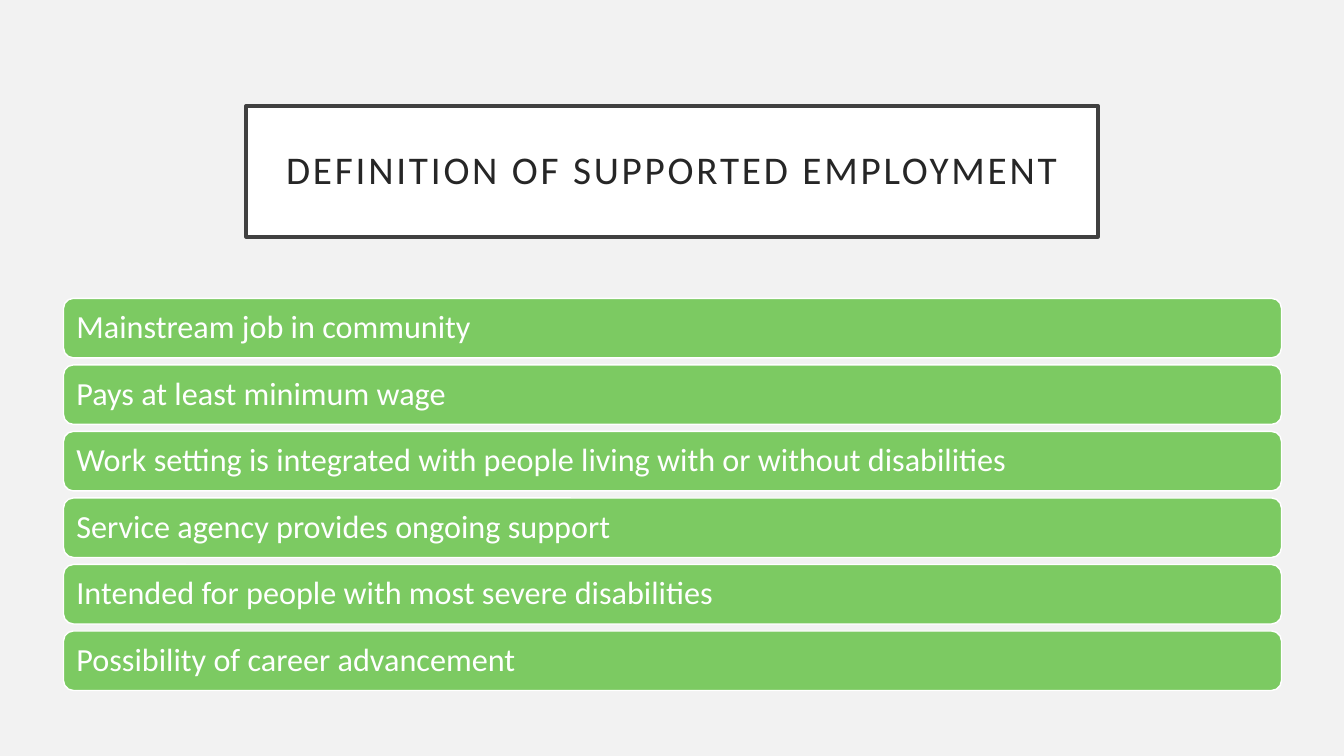
from pptx import Presentation
from pptx.dml.color import RGBColor
from pptx.enum.shapes import MSO_SHAPE
from pptx.enum.text import MSO_ANCHOR, PP_ALIGN
from pptx.util import Inches, Pt

TITLE = "DEFINITION OF SUPPORTED EMPLOYMENT"
POINTS = [
    "Mainstream job in community",
    "Pays at least minimum wage",
    "Work setting is integrated with people living with or without disabilities",
    "Service agency provides ongoing support",
    "Intended for people with most severe disabilities",
    "Possibility of career advancement",
]
FONT = "Calibri"
LEFT, TOP, WIDTH, HEIGHT, STEP = 0.63, 2.96, 12.08, 0.59, 0.66


def color(code):
    return RGBColor.from_string(code)


def add_box(slide, kind, place, fill, line, weight):
    box = slide.shapes.add_shape(kind, *[Inches(n) for n in place])
    box.shadow.inherit = False
    box.fill.solid()
    box.fill.fore_color.rgb = color(fill)
    box.line.color.rgb = color(line)
    box.line.width = Pt(weight)
    return box


def write(box, text, size=23, ink="FFFFFF", align=PP_ALIGN.LEFT, inset=0.1, track=0):
    """Fill a box with one line of text; track is letter spacing in points."""
    frame = box.text_frame
    frame.word_wrap = True
    frame.vertical_anchor = MSO_ANCHOR.MIDDLE
    frame.margin_left = frame.margin_right = Inches(inset)
    frame.margin_top = frame.margin_bottom = Inches(inset)
    para = frame.paragraphs[0]
    para.alignment = align
    para.line_spacing = 0.9
    run = para.add_run()
    run.text = text
    run.font.name = FONT
    run.font.size = Pt(size)
    run.font.color.rgb = color(ink)
    if track:
        run.font._element.set("spc", str(track * 100))


def main():
    deck = Presentation()
    deck.slide_width, deck.slide_height = Inches(13.33), Inches(7.5)
    slide = deck.slides.add_slide(deck.slide_layouts[6])
    slide.background.fill.solid()
    slide.background.fill.fore_color.rgb = color("F2F2F2")

    title = add_box(slide, MSO_SHAPE.RECTANGLE, (2.44, 1.05, 8.45, 1.3),
                    "FFFFFF", "404040", 2.5)
    write(title, TITLE, size=28, ink="262626", align=PP_ALIGN.CENTER,
          inset=0.2, track=2)

    for row, point in enumerate(POINTS):
        place = (LEFT, TOP + row * STEP, WIDTH, HEIGHT)
        bar = add_box(slide, MSO_SHAPE.ROUNDED_RECTANGLE, place,
                      "7CCA62", "FFFFFF", 1)
        write(bar, point)

    deck.save("out.pptx")


if __name__ == "__main__":
    main()
